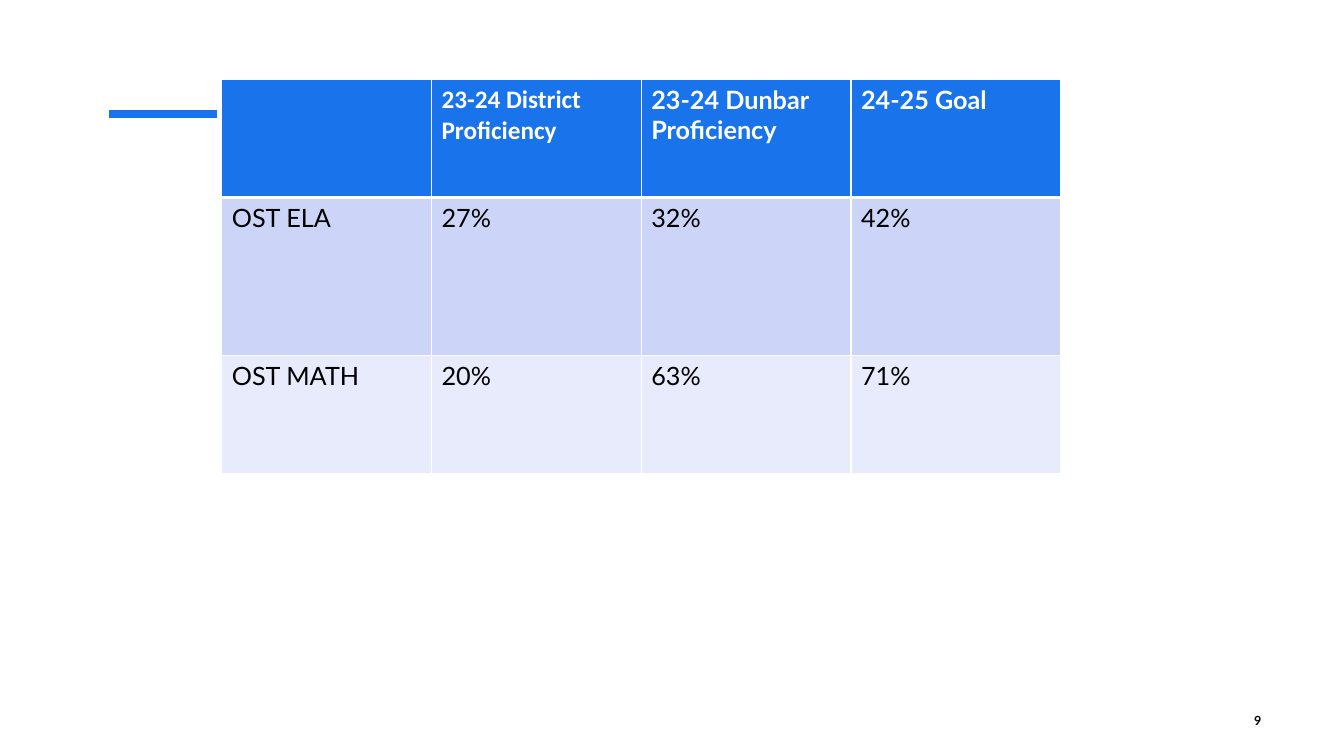
import pptx
import pptx.util
import pptx.dml.color
import pptx.enum.shapes
import pptx.enum.text
import pptx.oxml
import pptx.oxml.ns
from pptx.util import Inches

BLUE = "1973EB"
WHITE = "FFFFFF"
BLACK = "000000"
ROW_FILLS = [BLUE, "CCD5F7", "E8EBFB"]
ROW_HEIGHTS = [1.17, 1.57, 1.17]
COLUMN_WIDTH = 2.08
PROFICIENCY = [
    ["", "23-24 District Proficiency", "23-24 Dunbar Proficiency", "24-25 Goal"],
    ["OST ELA", "27%", "32%", "42%"],
    ["OST MATH", "20%", "63%", "71%"],
]


def color(value):
    return pptx.dml.color.RGBColor.from_string(value)


def write_text(text_frame, text, size=18, font="Lato", fill=BLACK, bold=False, align="LEFT"):
    paragraph = text_frame.paragraphs[0]
    paragraph.alignment = getattr(pptx.enum.text.PP_ALIGN, align)
    run = paragraph.add_run()
    run.text = text
    run.font.size = pptx.util.Pt(size)
    run.font.name = font
    run.font.bold = bold
    run.font.color.rgb = color(fill)


def set_border(cell, side, width):
    properties = cell._tc.get_or_add_tcPr()
    border = pptx.oxml.parse_xml(
        f'<a:{side} {pptx.oxml.ns.nsdecls("a")} w="{pptx.util.Pt(width)}">'
        f'<a:solidFill><a:srgbClr val="{WHITE}"/></a:solidFill></a:{side}>'
    )
    properties.append(border)


def add_accent_line(slide):
    line = slide.shapes.add_connector(
        pptx.enum.shapes.MSO_CONNECTOR.STRAIGHT,
        Inches(1.08), Inches(1.13), Inches(2.15), Inches(1.13),
    )
    line.line.color.rgb = color(BLUE)
    line.line.width = pptx.util.Pt(6)
    line._element.spPr.append(
        pptx.oxml.parse_xml(f'<a:effectLst {pptx.oxml.ns.nsdecls("a")}/>')
    )


def add_slide_number(slide):
    box = slide.shapes.add_textbox(Inches(11.82), Inches(6.95), Inches(0.79), Inches(0.4))
    box.text_frame.word_wrap = True
    box.text_frame.vertical_anchor = pptx.enum.text.MSO_ANCHOR.MIDDLE
    write_text(box.text_frame, "9", size=9, bold=True, align="RIGHT")


def format_cell(cell, text, row, column):
    header = row == 0
    for side in ("lnL", "lnR", "lnT", "lnB"):
        thick = (header and side == "lnB") or (row == 1 and side == "lnT")
        set_border(cell, side, 3 if thick else 1)
    cell.fill.solid()
    cell.fill.fore_color.rgb = color(ROW_FILLS[row])
    if text:
        write_text(
            cell.text_frame, text, bold=header,
            font="Calibri" if header and column == 1 else "Lato",
            fill=WHITE if header else BLACK,
        )


def add_proficiency_table(slide):
    column_count = len(PROFICIENCY[0])
    table = slide.shapes.add_table(
        len(PROFICIENCY), column_count, Inches(2.2), Inches(0.79),
        Inches(COLUMN_WIDTH * column_count), Inches(sum(ROW_HEIGHTS)),
    ).table
    for column in table.columns:
        column.width = Inches(COLUMN_WIDTH)
    for row, values in enumerate(PROFICIENCY):
        table.rows[row].height = Inches(ROW_HEIGHTS[row])
        for column, text in enumerate(values):
            format_cell(table.cell(row, column), text, row, column)


def main():
    presentation = pptx.Presentation()
    presentation.slide_width = Inches(13.33)
    presentation.slide_height = Inches(7.5)
    slide = presentation.slides.add_slide(presentation.slide_layouts[6])
    add_accent_line(slide)
    add_slide_number(slide)
    add_proficiency_table(slide)
    presentation.save("out.pptx")


if __name__ == "__main__":
    main()
